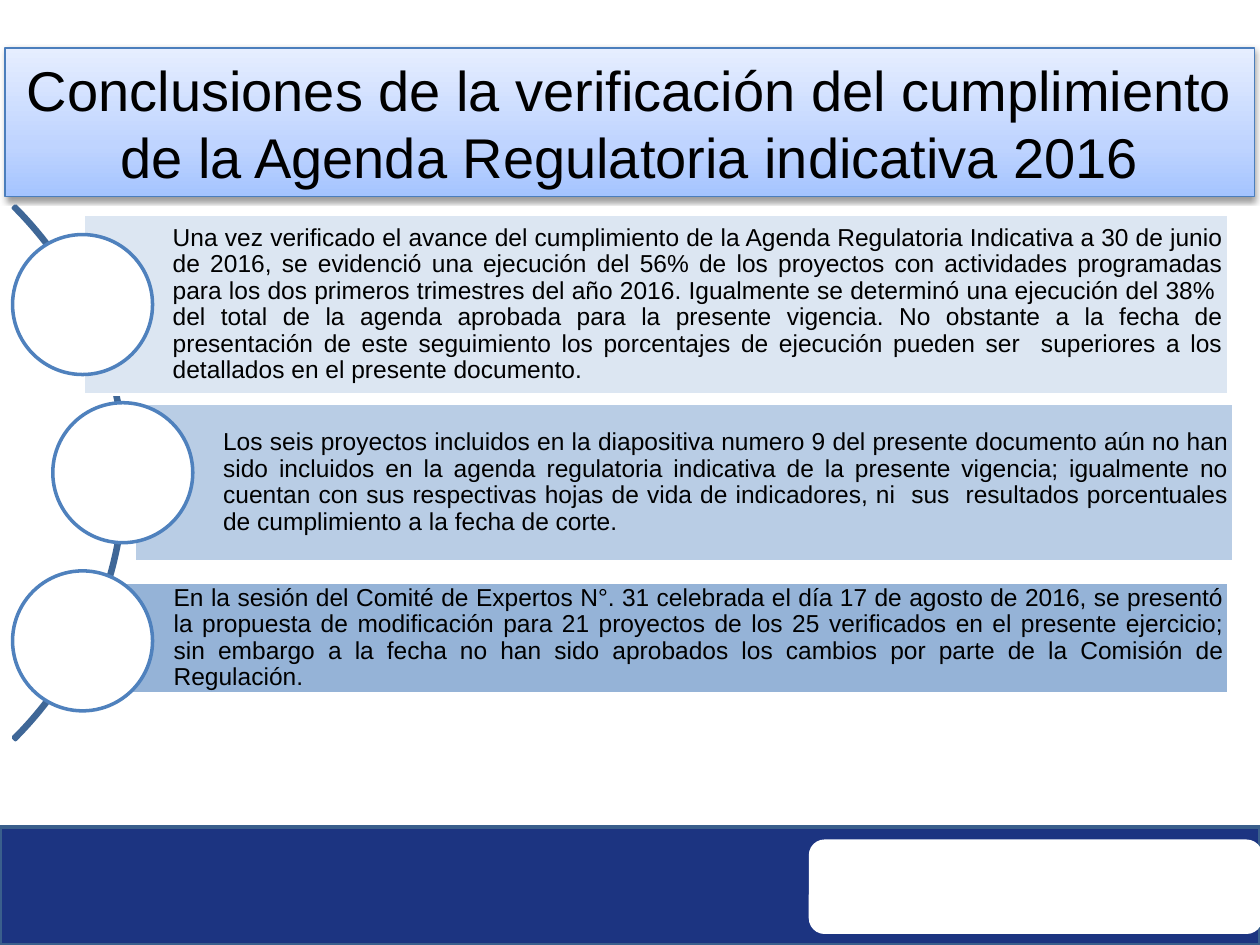
import copy

import lxml.etree
import pptx
import pptx.dml.color
import pptx.enum.shapes
import pptx.enum.text
import pptx.oxml.ns
import pptx.util

Pt = pptx.util.Pt
RGB = pptx.dml.color.RGBColor
SHAPE = pptx.enum.shapes.MSO_SHAPE
ALIGN = pptx.enum.text.PP_ALIGN
ANCHOR = pptx.enum.text.MSO_ANCHOR
qn = pptx.oxml.ns.qn

BLACK = RGB(0x00, 0x00, 0x00)
WHITE = RGB(0xFF, 0xFF, 0xFF)
NAVY = RGB(0x1C, 0x34, 0x81)
NAVY_EDGE = RGB(0x3A, 0x5F, 0x8C)
TITLE_EDGE = RGB(0x4B, 0x7E, 0xBC)
TITLE_STOPS = [(0, RGB(0xA4, 0xC4, 0xFF)), (0.35, RGB(0xBF, 0xD4, 0xFF)),
               (1, RGB(0xE6, 0xEE, 0xFF))]
ARC_BLUE = RGB(0x3F, 0x67, 0x97)
CIRCLE_BLUE = RGB(0x4F, 0x81, 0xBD)

CIRCLE = 80
CIRCLE_PITCH = 96.1

TITLE = ("Conclusiones de la verificación del cumplimiento "
         "de la Agenda Regulatoria indicativa 2016")

# Text, fill, band box (left, top, width, height), circle left
CONCLUSIONS = [
    ("Una vez verificado el avance del cumplimiento de la Agenda Regulatoria "
     "Indicativa a 30 de junio de 2016, se evidenció una ejecución del 56% de los "
     "proyectos con actividades programadas para los dos primeros trimestres del "
     "año 2016. Igualmente se determinó una ejecución del 38%  del total de la "
     "agenda aprobada para la presente vigencia. No obstante a la fecha de "
     "presentación de este seguimiento los porcentajes de ejecución pueden ser  "
     "superiores a los detallados en el presente documento.",
     RGB(0xDC, 0xE6, 0xF2), (47.7, 122.5, 654.2, 103), 7.2),
    ("Los seis proyectos incluidos en la diapositiva numero 9 del presente "
     "documento aún no han sido incluidos en la agenda regulatoria indicativa de la "
     "presente vigencia; igualmente no cuentan con sus respectivas hojas de vida de "
     "indicadores, ni  sus  resultados porcentuales de cumplimiento a la fecha de "
     "corte.",
     RGB(0xB9, 0xCD, 0xE5), (76.5, 230.5, 628.6, 90.5), 30.2),
    ("En la sesión del Comité de Expertos N°. 31 celebrada el día 17 de agosto de "
     "2016, se presentó la propuesta de modificación para 21 proyectos de los 25 "
     "verificados en el presente ejercicio; sin embargo a la fecha no han sido "
     "aprobados los cambios por parte de la Comisión de Regulación.",
     RGB(0x95, 0xB3, 0xD7), (48.2, 332.5, 654.2, 64), 7.2),
]


def add_box(slide, kind, box, fill=None, line=None, width=2):
    sp = slide.shapes.add_shape(kind, *(Pt(v) for v in box))
    if fill is None:
        sp.fill.background()
    else:
        sp.fill.solid()
        sp.fill.fore_color.rgb = fill
    if line is None:
        sp.line.fill.background()
    else:
        sp.line.color.rgb = line
        sp.line.width = Pt(width)
    sp.shadow.inherit = False
    return sp


def set_text(sp, text, size, align, spacing=1.0, insets=(7.2, 3.6, 7.2, 3.6)):
    tf = sp.text_frame
    tf.word_wrap = True
    tf.vertical_anchor = ANCHOR.MIDDLE
    tf.margin_left, tf.margin_top, tf.margin_right, tf.margin_bottom = map(Pt, insets)
    p = tf.paragraphs[0]
    p.alignment = align
    p.line_spacing = spacing
    r = p.add_run()
    r.text = text
    r.font.name = "Arial"
    r.font.size = Pt(size)
    r.font.color.rgb = BLACK


def set_gradient(sp, stops, angle):
    sp.fill.gradient()
    sp.fill.gradient_angle = angle
    gs_list = next(sp._element.spPr.iter(qn("a:gsLst")))
    gs_list.insert(1, copy.deepcopy(gs_list[0]))
    for stop, (position, color) in zip(sp.fill.gradient_stops, stops):
        stop.position = position
        stop.color.rgb = color


def add_shadow(sp, blur, distance, opacity):
    effects = sp._element.spPr.find(qn("a:effectLst"))
    shadow = lxml.etree.SubElement(
        effects, qn("a:outerShdw"), blurRad=str(Pt(blur)), dist=str(Pt(distance)),
        dir="5400000", rotWithShape="0")
    color = lxml.etree.SubElement(shadow, qn("a:srgbClr"), val=str(BLACK))
    lxml.etree.SubElement(color, qn("a:alpha"), val=str(opacity * 1000))


def add_footer(slide, left, top, width, height):
    add_box(slide, SHAPE.RECTANGLE, (left, top, width, height), NAVY, NAVY_EDGE)
    add_box(slide, SHAPE.ROUNDED_RECTANGLE,
            (left + 462.2, top + 7.2, 259.2, 54), WHITE)


def add_title(slide, left, top, width, height):
    sp = add_box(slide, SHAPE.RECTANGLE, (left, top, width, height),
                 WHITE, TITLE_EDGE, 0.75)
    set_gradient(sp, TITLE_STOPS, 90)
    add_shadow(sp, 3.1, 1.6, 38)
    set_text(sp, TITLE, 32, ALIGN.CENTER)


def add_conclusions(slide, left, top, width, height):
    # Arc of a full circle whose right edge bulges into the list
    arc = add_box(slide, SHAPE.BLOCK_ARC, (left, top, width, height), line=ARC_BLUE)
    for i, value in enumerate((189, 27, 0.004)):
        arc.adjustments[i] = value

    # Bands, each with its circle
    middle = top + height / 2
    for i, (text, fill, band, circle_left) in enumerate(CONCLUSIONS):
        sp = add_box(slide, SHAPE.RECTANGLE, band, fill, WHITE)
        set_text(sp, text, 14, ALIGN.JUSTIFY, 0.9, (51, 2.8, 2.8, 2.8))
        circle_top = middle + (i - 1) * CIRCLE_PITCH - CIRCLE / 2
        add_box(slide, SHAPE.OVAL, (circle_left, circle_top, CIRCLE, CIRCLE),
                WHITE, CIRCLE_BLUE)


def main():
    prs = pptx.Presentation()
    prs.slide_width, prs.slide_height = Pt(720), Pt(540)
    slide = prs.slides.add_slide(prs.slide_layouts[6])
    add_footer(slide, 0, 472.5, 720, 67.5)
    add_title(slide, 2.9, 27.5, 714.2, 85)
    add_conclusions(slide, -359.3, 54.5, 431.3, 431.3)
    prs.save("out.pptx")


if __name__ == "__main__":
    main()
